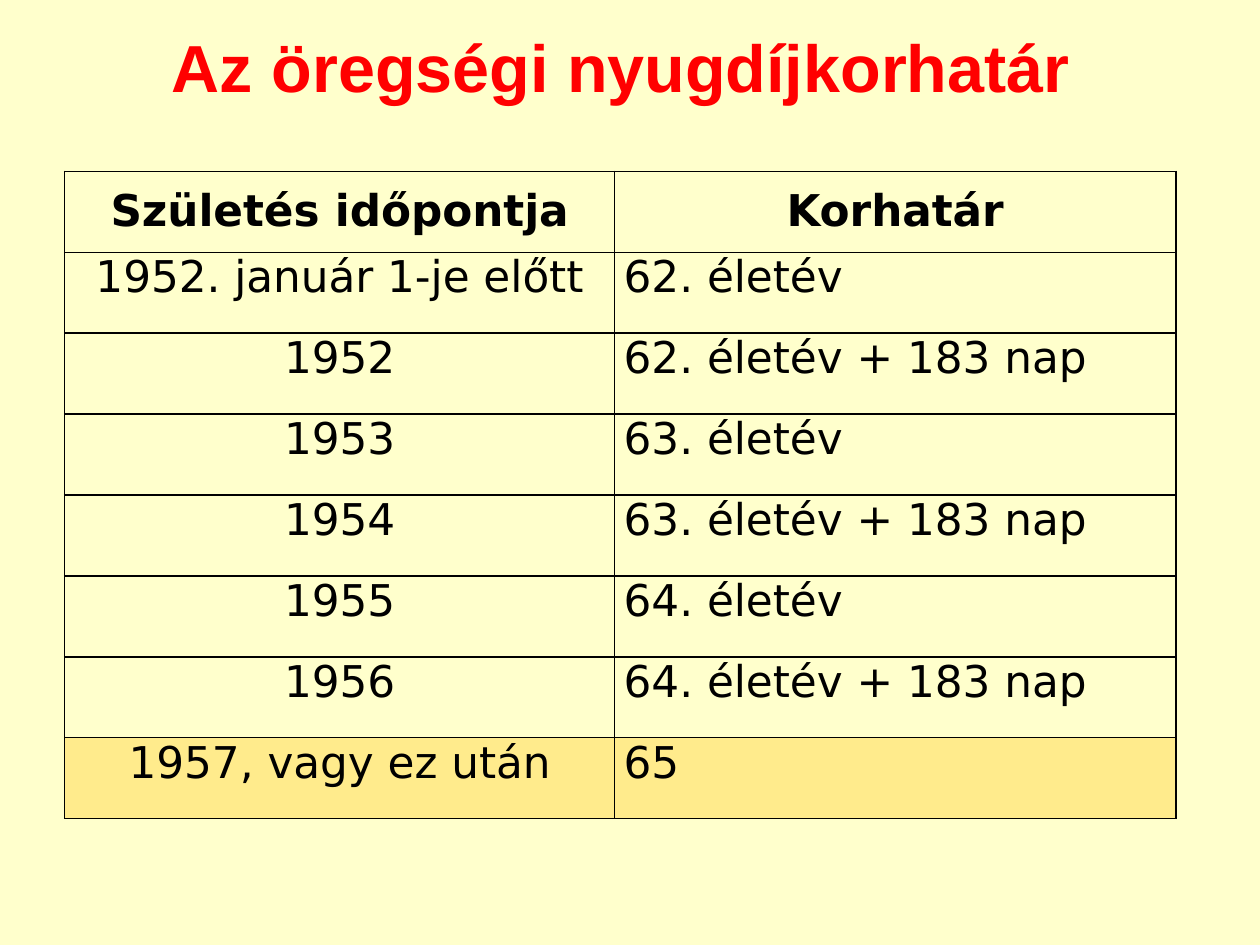
from dataclasses import dataclass

from lxml.etree import SubElement
from pptx import Presentation
from pptx.dml.color import RGBColor as RGB
from pptx.enum.text import MSO_ANCHOR as Anchor, PP_ALIGN as Align
from pptx.oxml.ns import qn
from pptx.util import Pt


@dataclass(frozen=True)
class Theme:
    background: RGB = RGB(0xFF, 0xFF, 0xCC)
    title: RGB = RGB(0xFF, 0, 0)
    ink: RGB = RGB(0, 0, 0)
    highlight: RGB = RGB(0xFF, 0xC0, 0)
    highlight_alpha: int = 31
    title_font: str = "Arial"
    table_font: str = "DejaVu Sans"
    title_size: int = 38
    table_size: int = 25
    border: int = 1


THEME = Theme()

ROWS = [
    ("Születés időpontja", "Korhatár"),
    ("1952. január 1-je előtt", "62. életév"),
    ("1952", "62. életév + 183 nap"),
    ("1953", "63. életév"),
    ("1954", "63. életév + 183 nap"),
    ("1955", "64. életév"),
    ("1956", "64. életév + 183 nap"),
    ("1957, vagy ez után", "65"),
]


def style_paragraph(p, font, size, color, bold, align):
    p.font.name = font
    p.font.size = Pt(size)
    p.font.color.rgb = color
    p.font.bold = bold
    p.alignment = align


def add_title(s, box, text):
    sp = s.shapes.title
    sp.left, sp.top, sp.width, sp.height = (Pt(v) for v in box)
    tf = sp.text_frame
    tf.text = text
    tf.word_wrap = True
    tf.vertical_anchor = Anchor.MIDDLE
    style_paragraph(tf.paragraphs[0], THEME.title_font, THEME.title_size,
                    THEME.title, True, Align.CENTER)


def add_borders(cell):
    tc_pr = cell._tc.get_or_add_tcPr()
    for side in ("lnL", "lnR", "lnT", "lnB"):
        ln = SubElement(tc_pr, qn(f"a:{side}"), w=str(Pt(THEME.border)))
        fill = SubElement(ln, qn("a:solidFill"))
        SubElement(fill, qn("a:srgbClr"), val=str(THEME.ink))


def fill_cell(cell, highlighted):
    if not highlighted:
        cell.fill.background()
        return
    cell.fill.solid()
    cell.fill.fore_color.rgb = THEME.highlight
    color = cell._tc.tcPr.find(qn("a:solidFill")).find(qn("a:srgbClr"))
    SubElement(color, qn("a:alpha"), val=str(THEME.highlight_alpha * 1000))


def add_age_table(s, box, rows, first_share):
    left, top, width, height = box
    table = s.shapes.add_table(len(rows), 2, *(Pt(v) for v in box)).table
    table.first_row = table.horz_banding = False
    table.columns[0].width = Pt(width * first_share)
    table.columns[1].width = Pt(width * (1 - first_share))
    for i, texts in enumerate(rows):
        table.rows[i].height = Pt(height / len(rows))
        header = i == 0
        for j, text in enumerate(texts):
            cell = table.cell(i, j)
            cell.text = text
            cell.margin_left = cell.margin_right = Pt(5.2)
            cell.margin_top = cell.margin_bottom = 0
            cell.vertical_anchor = Anchor.MIDDLE if header else Anchor.TOP
            align = Align.CENTER if header or j == 0 else Align.LEFT
            style_paragraph(cell.text_frame.paragraphs[0], THEME.table_font,
                            THEME.table_size, THEME.ink, header, align)
            add_borders(cell)
            fill_cell(cell, i == len(rows) - 1)


def main():
    prs = Presentation()
    prs.slide_width, prs.slide_height = Pt(720), Pt(540)
    s = prs.slides.add_slide(prs.slide_layouts.get_by_name("Title Only"))
    s.background.fill.solid()
    s.background.fill.fore_color.rgb = THEME.background
    add_title(s, (31, 3.6, 648, 68.4), "Az öregségi nyugdíjkorhatár")
    add_age_table(s, (36.9, 97.9, 635, 370), ROWS, 0.495)
    prs.save("out.pptx")


if __name__ == "__main__":
    main()
